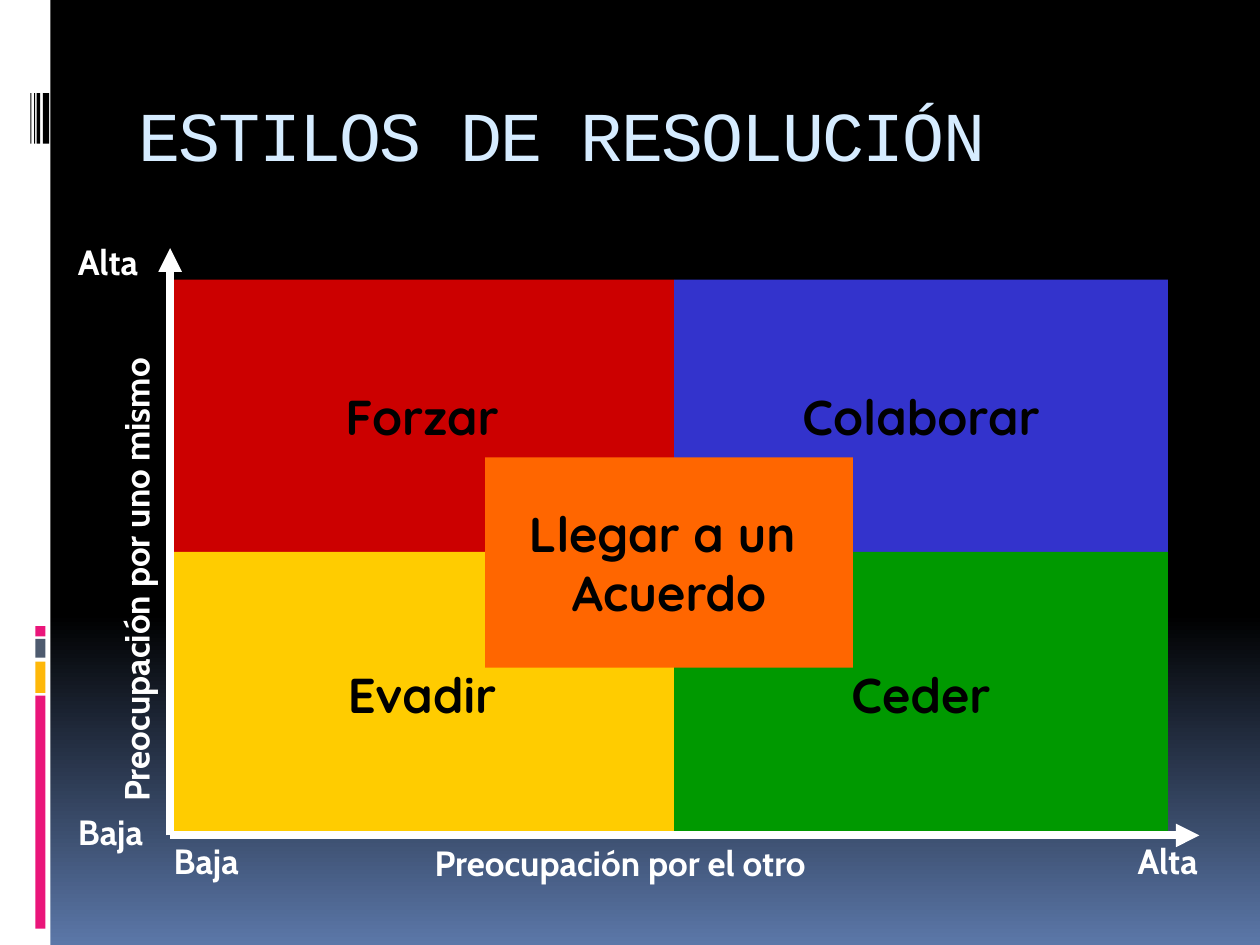
from copy import deepcopy

from lxml import etree
from pptx import Presentation
from pptx.dml.color import RGBColor
from pptx.enum.shapes import MSO_CONNECTOR, MSO_SHAPE
from pptx.enum.text import MSO_ANCHOR, PP_ALIGN
from pptx.oxml.ns import qn
from pptx.util import Inches, Pt

RECTANGLE = MSO_SHAPE.RECTANGLE
STRAIGHT = MSO_CONNECTOR.STRAIGHT
MIDDLE, TOP = MSO_ANCHOR.MIDDLE, MSO_ANCHOR.TOP
CENTER, LEFT = PP_ALIGN.CENTER, PP_ALIGN.LEFT

BLACK = RGBColor(0x00, 0x00, 0x00)
WHITE = RGBColor(0xFF, 0xFF, 0xFF)
STEEL = RGBColor(0x5B, 0x77, 0xA8)
PINK = RGBColor(0xEA, 0x15, 0x7A)
AMBER = RGBColor(0xFE, 0xB8, 0x0A)
SLATE = RGBColor(0x4E, 0x5B, 0x6F)
PALE_BLUE = RGBColor(0xD6, 0xEC, 0xFF)
RED = RGBColor(0xCC, 0x00, 0x00)
YELLOW = RGBColor(0xFF, 0xCC, 0x00)
BLUE = RGBColor(0x33, 0x33, 0xCC)
GREEN = RGBColor(0x00, 0x99, 0x00)
ORANGE = RGBColor(0xFF, 0x66, 0x00)

GRID_X = [1.35, 5.35, 9.27]
GRID_Y = [2.22, 4.38, 6.63]
STYLES = [
    [("Forzar", RED), ("Colaborar", BLUE)],
    [("Evadir", YELLOW), ("Ceder", GREEN)],
]
SIDE_BARS = [(4.97, 0.08, PINK), (5.07, 0.15, SLATE), (5.25, 0.25, AMBER), (5.52, 1.85, PINK)]
BARCODE = [(0.24, 0.01), (0.27, 0.01), (0.29, 0.03), (0.34, 0.05)]
AXIS_LABELS = [
    ("Preocupación por el otro", 3.35, 6.63, 3.62, 0),
    ("Preocupación por uno mismo", -1.05, 4.12, 4.25, 270),
    ("Alta", 0.52, 1.86, 0.76, 0),
    ("Alta", 8.93, 6.61, 0.76, 0),
    ("Baja", 1.28, 6.61, 0.83, 0),
    ("Baja", 0.52, 6.38, 0.83, 0),
]


def write_text(box, text, *, font, size, color, bold=False, align=LEFT,
               anchor=TOP, wrap=False, spacing=0):
    frame = box.text_frame
    frame.word_wrap = wrap
    frame.vertical_anchor = anchor
    for index, line in enumerate(text.split("\n")):
        para = frame.add_paragraph() if index else frame.paragraphs[0]
        para.alignment = align
        span = para.add_run()
        span.text = line
        span.font.name = font
        span.font.size = Pt(size)
        span.font.bold = bold
        span.font.color.rgb = color
        if spacing:
            span.font._element.set("spc", str(spacing * 100))


def add_block(page, left, top, width, height, color, text=None):
    box = page.shapes.add_shape(
        RECTANGLE, Inches(left), Inches(top), Inches(width), Inches(height))
    box.shadow.inherit = False
    box.fill.solid()
    box.fill.fore_color.rgb = color
    box.line.fill.background()
    if text:
        write_text(box, text, font="Quicksand", size=28, color=BLACK, bold=True,
                   align=CENTER, anchor=MIDDLE)


def add_label(page, text, left, top, width, height, rotation=0, **style):
    box = page.shapes.add_textbox(
        Inches(left), Inches(top), Inches(width), Inches(height))
    box.rotation = rotation
    write_text(box, text, **style)


def add_axis(page, end_x, end_y):
    axis = page.shapes.add_connector(
        STRAIGHT, Inches(GRID_X[0]), Inches(GRID_Y[-1]), Inches(end_x), Inches(end_y))
    axis.line.color.rgb = WHITE
    axis.line.width = Pt(4.5)
    etree.SubElement(axis.line._get_or_add_ln(), qn("a:tailEnd"), type="triangle")
    etree.SubElement(axis._element.spPr, qn("a:effectLst"))


def paint_background(page):
    fill = page.background.fill
    fill.gradient()
    fill.gradient_angle = 270
    stop_list = page._element.find(".//" + qn("a:gsLst"))
    stop_list.insert(0, deepcopy(stop_list[0]))
    for stop, position, color in zip(fill.gradient_stops, (0, 0.65, 1), (BLACK, BLACK, STEEL)):
        stop.position = position
        stop.color.rgb = color


def add_side_strip(page):
    add_block(page, 0, 0, 0.4, 7.5, WHITE)
    for top, height, color in SIDE_BARS:
        add_block(page, 0.28, top, 0.08, height, color)
    for left, width in BARCODE:
        add_block(page, left, 0.74, width, 0.4, BLACK)


def add_style_grid(page):
    for row, top, bottom in zip(STYLES, GRID_Y, GRID_Y[1:]):
        for (name, color), left, right in zip(row, GRID_X, GRID_X[1:]):
            add_block(page, left, top, right - left, bottom - top, color, name)
    add_block(page, 3.85, 3.63, 2.92, 1.67, ORANGE, "Llegar a un \nAcuerdo")


def main():
    deck = Presentation()
    deck.slide_width, deck.slide_height = Inches(10), Inches(7.5)
    page = deck.slides.add_slide(deck.slide_layouts[6])
    paint_background(page)
    add_side_strip(page)
    add_label(page, "ESTILOS DE RESOLUCIÓN", 1, 0.56, 8.5, 1, font="Courier New",
              size=40, color=PALE_BLUE, anchor=MIDDLE, wrap=True, spacing=-1)
    add_style_grid(page)
    add_axis(page, 9.52, GRID_Y[-1])
    add_axis(page, GRID_X[0], 1.97)
    for text, left, top, width, rotation in AXIS_LABELS:
        add_label(page, text, left, top, width, 0.43, rotation,
                  font="Cabin", size=20, color=WHITE, bold=True)
    deck.save("out.pptx")


if __name__ == "__main__":
    main()
